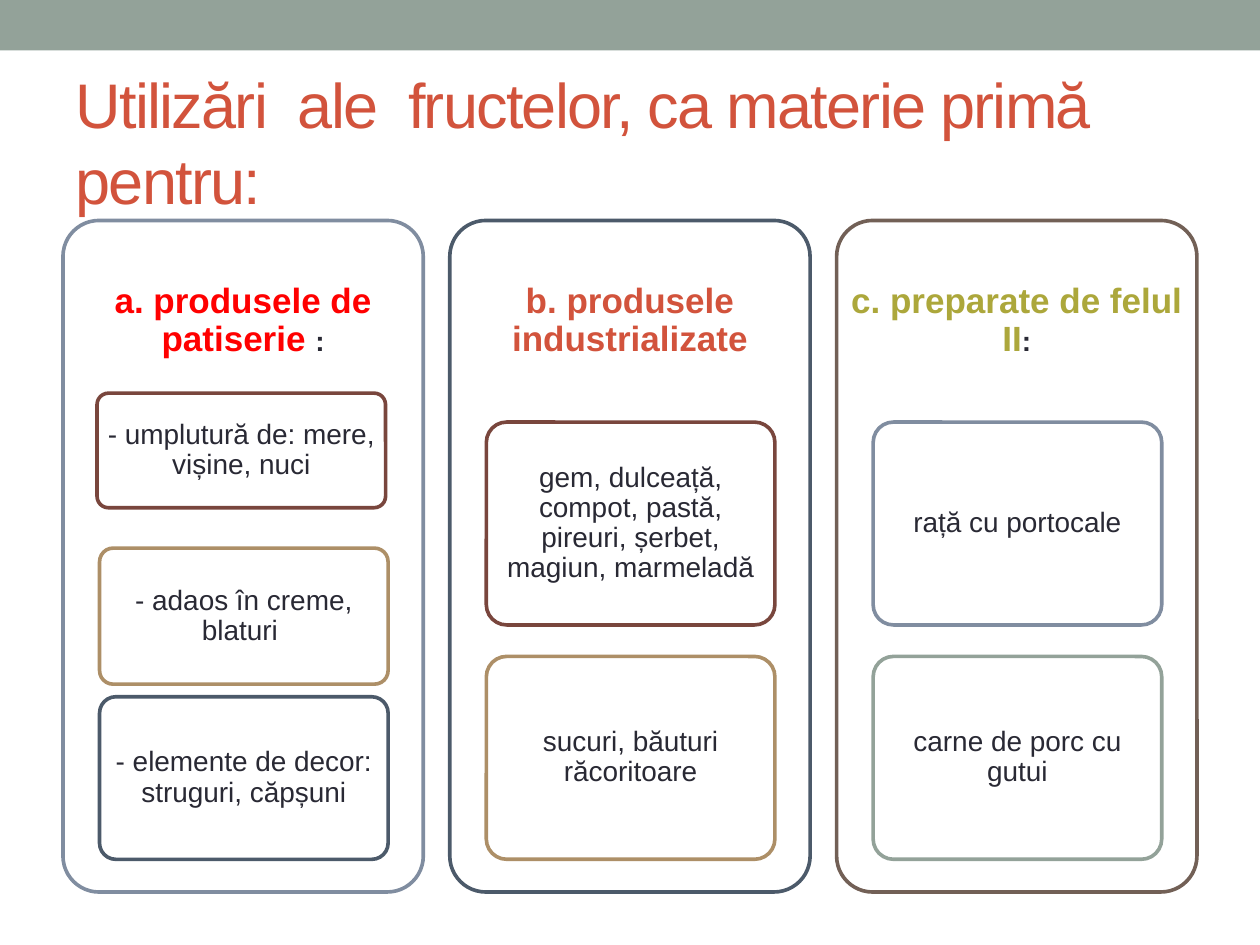
from dataclasses import dataclass

from pptx import Presentation
from pptx.dml.color import RGBColor
from pptx.enum import shapes, text
from pptx.util import Inches, Pt

FONT = "Arial"
INK, RED, WHITE = "292934", "D2533C", "FFFFFF"
SAGE, BLUE, SLATE = "93A299", "808DA0", "4C5A6A"
MAROON, TAN, BROWN = "79463D", "AD8F67", "726056"

COLUMN_LEFT, COLUMN_STEP, COLUMN_TOP = 0.5, 3.07, 1.75
COLUMN_WIDTH, COLUMN_HEIGHT, HEADING_HEIGHT = 2.86, 5.33, 1.6
CARD_WIDTH, CARD_INDENT = 2.29, 0.29


@dataclass
class Span:
    text: str
    size: int = 16
    color: str = INK
    bold: bool = False


@dataclass
class Card:
    text: str
    line: str
    top: float
    height: float = 1.61
    indent: float = CARD_INDENT


@dataclass
class Column:
    heading: list[Span]
    line: str
    cards: list[Card]


COLUMNS = [
    Column([Span("a. produsele de patiserie ", 20, "FF0000", True), Span(":", bold=True)], BLUE, [
        Card("- umplutură de: mere, vișine, nuci", MAROON, 3.12, 0.91, 0.27),
        Card("- adaos în creme, blaturi ", TAN, 4.35, 1.08),
        Card("- elemente de decor: struguri, căpșuni", SLATE, 5.53, 1.29),
    ]),
    Column([Span("b. produsele industrializate", 20, RED, True)], SLATE, [
        Card("gem, dulceață, compot, pastă, pireuri, șerbet, magiun, marmeladă", MAROON, 3.35),
        Card("sucuri, băuturi răcoritoare", TAN, 5.21),
    ]),
    Column([Span("c. preparate de felul II", 20, "ACA73B", True), Span(":", bold=True)], BROWN, [
        Card("rață cu portocale", BLUE, 3.35),
        Card("carne de porc cu gutui", SAGE, 5.21),
    ]),
]


def rgb(color: str) -> RGBColor:
    return RGBColor.from_string(color)


def add_frame(page, left: float, top: float, width: float, height: float, line: str):
    """Add a white rounded rectangle with a coloured outline."""
    box = page.shapes.add_shape(shapes.MSO_SHAPE.ROUNDED_RECTANGLE, Inches(left),
                                Inches(top), Inches(width), Inches(height))
    box.adjustments[0] = 0.1
    box.shadow.inherit = False
    box.fill.solid()
    box.fill.fore_color.rgb = rgb(WHITE)
    box.line.color.rgb = rgb(line)
    box.line.width = Pt(2.08)
    return box


def write(box, spans: list[Span], inset_x: float, inset_y: float) -> None:
    """Fill a box with one centred paragraph."""
    frame = box.text_frame
    frame.word_wrap = True
    frame.vertical_anchor = text.MSO_ANCHOR.MIDDLE
    frame.margin_left = frame.margin_right = Inches(inset_x)
    frame.margin_top = frame.margin_bottom = Inches(inset_y)
    para = frame.paragraphs[0]
    para.alignment = text.PP_ALIGN.CENTER
    para.line_spacing = 0.9
    for span in spans:
        run = para.add_run()
        run.text = span.text
        run.font.name = FONT
        run.font.size = Pt(span.size)
        run.font.bold = span.bold
        run.font.color.rgb = rgb(span.color)


def add_column(page, column: Column, left: float) -> None:
    add_frame(page, left, COLUMN_TOP, COLUMN_WIDTH, COLUMN_HEIGHT, column.line)
    heading = page.shapes.add_textbox(Inches(left), Inches(COLUMN_TOP),
                                      Inches(COLUMN_WIDTH), Inches(HEADING_HEIGHT))
    write(heading, column.heading, 0.08, 0.08)
    for card in column.cards:
        box = add_frame(page, left + card.indent, card.top, CARD_WIDTH, card.height, card.line)
        write(box, [Span(card.text)], 0.04, 0.03)


def add_title(page, wording: str) -> None:
    title = page.shapes.title
    title.left, title.top = Inches(0.5), Inches(0.58)
    title.width, title.height = Inches(9), Inches(1.08)
    frame = title.text_frame
    frame.text = wording
    frame.auto_size = text.MSO_AUTO_SIZE.NONE
    frame.vertical_anchor = text.MSO_ANCHOR.MIDDLE
    para = frame.paragraphs[0]
    para.alignment = text.PP_ALIGN.LEFT
    font = para.runs[0].font
    font.name, font.size = FONT, Pt(36)
    font.color.rgb = rgb(RED)
    # Tighten the letters by one point
    para.runs[0]._r.get_or_add_rPr().set("spc", "-100")


def main() -> None:
    deck = Presentation()
    deck.slide_width, deck.slide_height = Inches(10), Inches(7.5)
    page = deck.slides.add_slide(deck.slide_layouts[5])

    # Band across the top
    band = page.shapes.add_shape(shapes.MSO_SHAPE.RECTANGLE, 0, 0, deck.slide_width, Inches(0.4))
    band.shadow.inherit = False
    band.fill.solid()
    band.fill.fore_color.rgb = rgb(SAGE)
    band.line.fill.background()

    add_title(page, "Utilizări  ale  fructelor, ca materie primă pentru:")

    # Three columns of cards
    for index, column in enumerate(COLUMNS):
        add_column(page, column, COLUMN_LEFT + index * COLUMN_STEP)

    deck.save("out.pptx")


if __name__ == "__main__":
    main()
